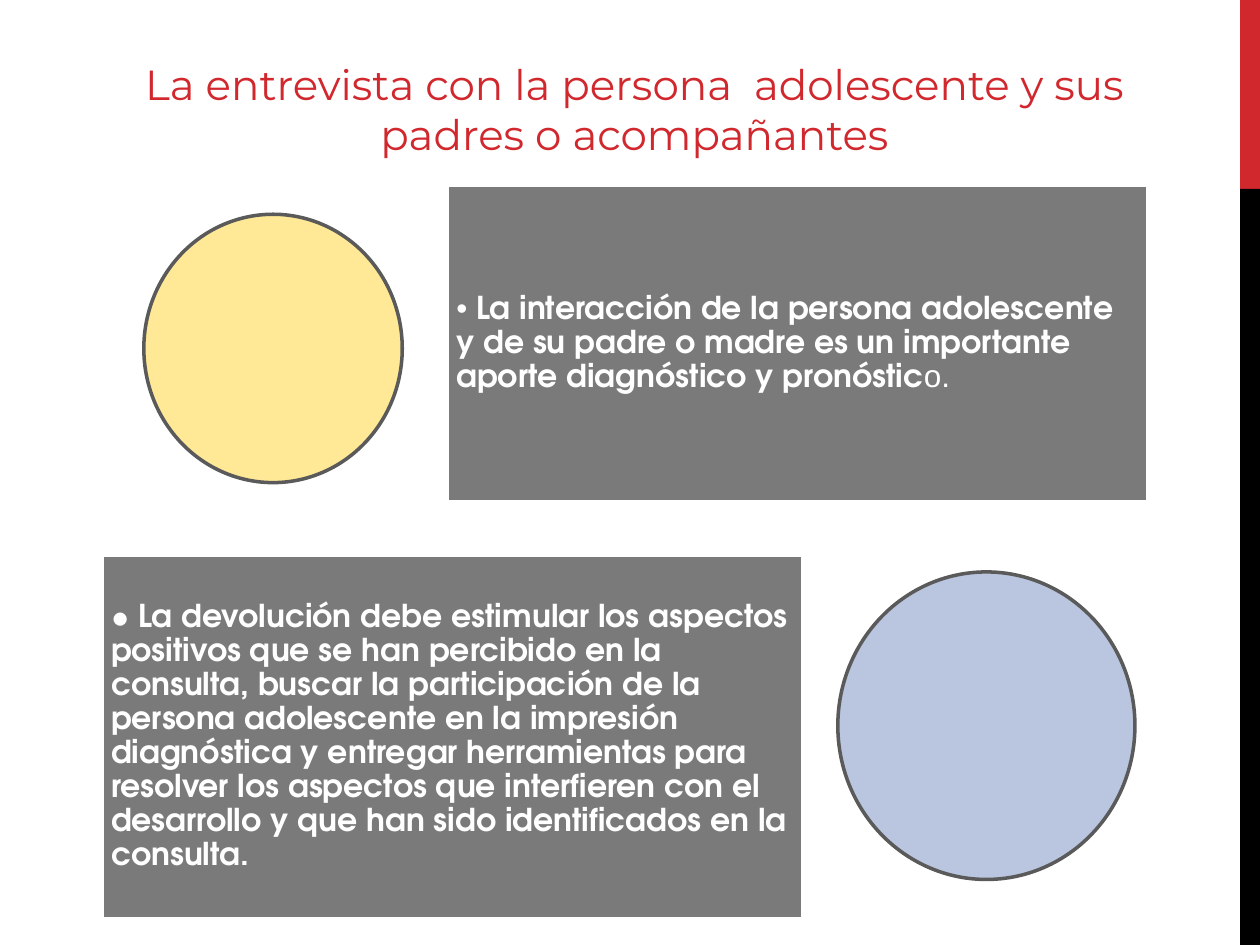
from pptx import Presentation
from pptx.dml.color import RGBColor
from pptx.enum.shapes import MSO_SHAPE
from pptx.enum.text import MSO_ANCHOR, MSO_AUTO_SIZE, PP_ALIGN
from pptx.util import Cm, Pt

RECTANGLE, OVAL = MSO_SHAPE.RECTANGLE, MSO_SHAPE.OVAL
MIDDLE, BOTTOM = MSO_ANCHOR.MIDDLE, MSO_ANCHOR.BOTTOM
LEFT, CENTER = PP_ALIGN.LEFT, PP_ALIGN.CENTER
NO_FIT = MSO_AUTO_SIZE.NONE

COLORS = {
    "red": "D1282E",
    "black": "000000",
    "white": "FFFFFF",
    "panel": "7A7A7A",
    "outline": "5A5A5A",
    "yellow": "FFE996",
    "blue": "BAC5DF",
}
PANEL_WIDTH = 14.12
SANS, DISPLAY = "Arial", "TeX Gyre Adventor"

TITLE = "La entrevista con la persona  adolescente y sus padres o acompañantes"
INTERACTION = [
    ("• ", SANS, False),
    ("La interacción de la persona adolescente y de su padre o madre es un "
     "importante aporte diagnóstico y pronóstic", DISPLAY, True),
    ("o.", SANS, False),
]
FEEDBACK = [
    ("• La devolución debe estimular los aspectos positivos que se han percibido "
     "en la consulta, buscar la participación de la persona adolescente en la "
     "impresión diagnóstica y entregar herramientas para resolver los aspectos "
     "que interfieren con el desarrollo y que han sido identificados en la "
     "consulta.", DISPLAY, True),
]


def color(name):
    """Return the named colour."""
    return RGBColor.from_string(COLORS[name])


def apply_format(target, values):
    """Set each attribute of the target from a dict."""
    for name, value in values.items():
        setattr(target, name, value)


def add_figure(page, kind, box, fill, line=None, line_width=0):
    """Add a filled shape with an optional outline."""
    figure = page.shapes.add_shape(kind, *map(Cm, box))
    figure.shadow.inherit = False
    figure.fill.solid()
    figure.fill.fore_color.rgb = color(fill)
    if line:
        figure.line.color.rgb = color(line)
        figure.line.width = Pt(line_width)
    else:
        figure.line.fill.background()
    return figure


def add_span(para, text, font, size, shade, bold=False):
    """Add a formatted run to a paragraph."""
    span = para.add_run()
    span.text = text
    apply_format(span.font, {"name": font, "size": Pt(size), "bold": bold})
    span.font.color.rgb = color(shade)


def add_side_band(page, box):
    """Draw the band whose top fifth is red and the rest black."""
    left, top, width, height = box
    split = height / 5
    add_figure(page, RECTANGLE, (left, top, width, split), "red")
    add_figure(page, RECTANGLE, (left, top + split, width, height - split), "black")


def place_title(page, box):
    """Place and format the title placeholder."""
    title = page.shapes.title
    apply_format(title, dict(zip(("left", "top", "width", "height"), map(Cm, box))))
    apply_format(title.text_frame, {
        "word_wrap": True, "auto_size": NO_FIT, "vertical_anchor": BOTTOM})
    para = title.text_frame.paragraphs[0]
    apply_format(para, {"alignment": CENTER, "line_spacing": 1.0})
    add_span(para, TITLE, "Montserrat", 24, "red")


def add_panel(page, box, spans):
    """Add a grey panel holding one paragraph."""
    frame = add_figure(page, RECTANGLE, box, "panel", "white", 2.25).text_frame
    margins = {f"margin_{side}": Cm(0.18) for side in ("left", "top", "right", "bottom")}
    apply_format(frame, {"word_wrap": True, "vertical_anchor": MIDDLE, **margins})
    para = frame.paragraphs[0]
    apply_format(para, {"alignment": LEFT, "line_spacing": 0.9})
    for text, font, bold in spans:
        add_span(para, text, font, 18, "white", bold)


def add_row(page, box, spans, circle_size, circle_drop, fill, circle_first):
    """Set a panel and a circle at opposite ends of the box."""
    left, top, width, height = box
    circle_width, circle_height = circle_size
    panel_left, circle_left = left, left + width - circle_width
    if circle_first:
        panel_left, circle_left = left + width - PANEL_WIDTH, left
    add_panel(page, (panel_left, top, PANEL_WIDTH, height), spans)
    circle_box = (circle_left, top + circle_drop, circle_width, circle_height)
    add_figure(page, OVAL, circle_box, fill, "outline", 2)


def main():
    """Build and save the slide."""
    deck = Presentation()
    apply_format(deck, {"slide_width": Cm(25.4), "slide_height": Cm(19.05)})
    page = deck.slides.add_slide(deck.slide_layouts[5])
    add_side_band(page, (25, 0, 0.4, 19.05))
    place_title(page, (1.27, 0.43, 23.04, 2.9))
    add_row(page, (2.9, 3.73, 20.24, 6.4), INTERACTION, (5.21, 5.41), 0.59, "yellow", True)
    add_row(page, (2.06, 11.18, 20.82, 7.34), FEEDBACK, (5.99, 6.2), 0.35, "blue", False)
    deck.save("out.pptx")


if __name__ == "__main__":
    main()
